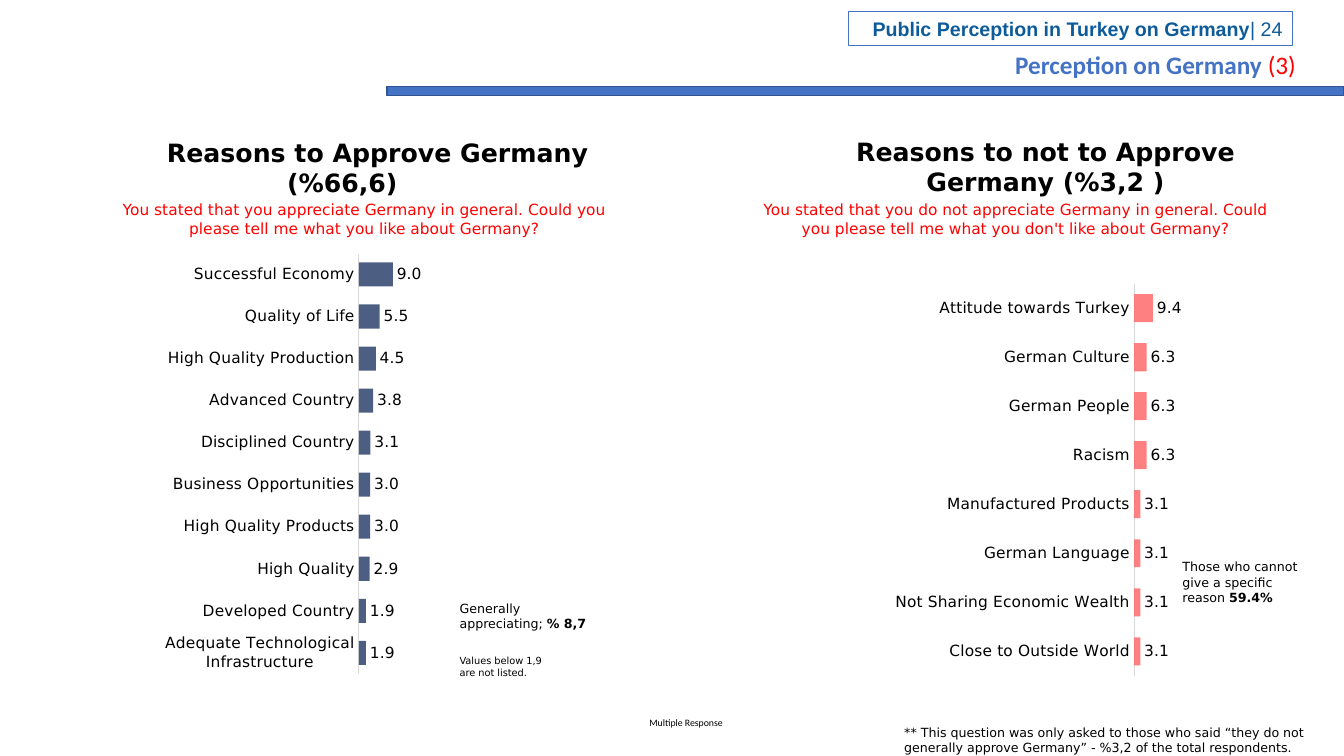
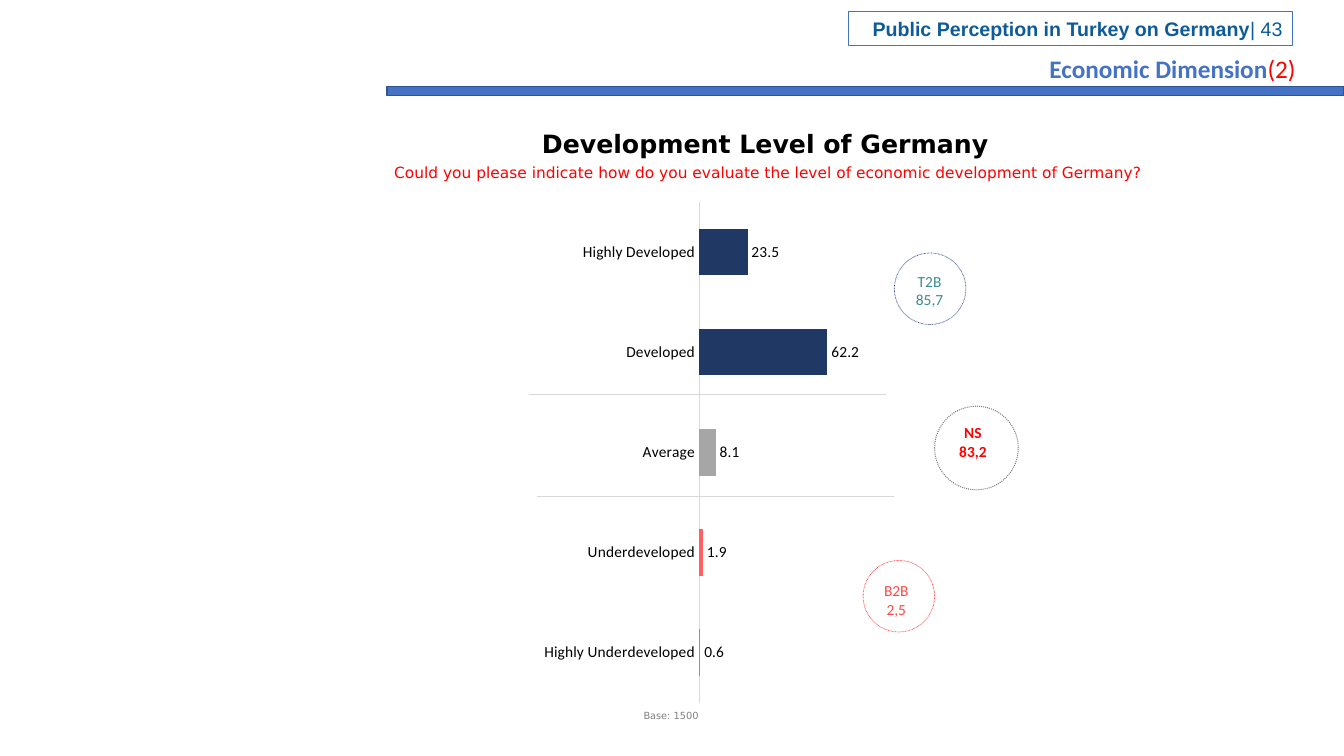
from dataclasses import dataclass

from lxml import etree
from pptx import Presentation
from pptx import util as u
from pptx.chart import data
from pptx.dml import color
from pptx.enum import chart as ec, dml, shapes, text
from pptx.oxml import ns

PX = 9144  # 100 px to the inch
LEFT, CENTER, RIGHT = text.PP_ALIGN.LEFT, text.PP_ALIGN.CENTER, text.PP_ALIGN.RIGHT


@dataclass(frozen=True)
class Theme:
    blue: str = "4472C4"
    edge: str = "325491"
    header: str = "0E5B9A"
    red: str = "FF0000"
    black: str = "000000"
    grey: str = "808080"
    rule: str = "D9D9D9"
    navy: str = "203864"
    coral: str = "FF6161"
    silver: str = "A6A6A6"
    teal: str = "3C8C93"
    rose: str = "FF4747"
    sans: str = "DejaVu Sans"
    body: str = "Calibri"
    head: str = "Arial"
    title: int = 18
    page: int = 14
    text: int = 11
    note: int = 9
    small: int = 7


T = Theme()


def rgb(c):
    return color.RGBColor.from_string(c)


def px(*lengths):
    return [u.Emu(n * PX) for n in lengths]


def set_font(f, size, name, c, bold=False):
    f.size, f.name, f.bold = u.Pt(size), name, bold
    f.color.rgb = rgb(c)


def set_line(line, c, width, dash=None):
    line.color.rgb = rgb(c)
    line.width = u.Pt(width)
    if dash:
        line.dash_style = dash


def set_plot_area(chart, x, y, w, h):
    """Fix the inner plot area, in fractions of the chart."""
    area = chart._chartSpace.chart.plotArea
    for old in area.findall(ns.qn("c:layout")):
        area.remove(old)
    layout = etree.Element(ns.qn("c:layout"))
    manual = etree.SubElement(layout, ns.qn("c:manualLayout"))
    for tag, val in (("layoutTarget", "inner"), ("xMode", "edge"), ("yMode", "edge"),
                     ("x", x), ("y", y), ("w", w), ("h", h)):
        etree.SubElement(manual, ns.qn("c:" + tag)).set("val", str(val))
    area.insert(0, layout)


class Deck:
    def __init__(self):
        self.prs = Presentation()
        self.prs.slide_width, self.prs.slide_height = px(1333, 750)
        self.s = None

    def slide(self, page, title, part, x, y):
        self.s = self.prs.slides.add_slide(self.prs.slide_layouts[6])
        self.shape(384, 86, 949, 9, fill=T.blue, line=T.edge, width=1)
        box = self.shape(842, 11, 440, 34, line=T.blue)
        self.fill_text(box.text_frame, [[("Public Perception in Turkey on Germany", {"bold": True}),
                                         (f"| {page}", {})]],
                       size=T.page, font=T.head, c=T.header, align=RIGHT)
        self.text(x, y, 1320 - x, 40, [(title, {"bold": True}), (part, {"c": T.red})],
                  size=T.title, font=T.body, c=T.blue)

    def shape(self, x, y, w, h, kind=shapes.MSO_SHAPE.RECTANGLE, fill=None,
              line=T.edge, width=0.75, dash=None):
        sp = self.s.shapes.add_shape(kind, *px(x, y, w, h))
        sp.shadow.inherit = False
        if fill:
            sp.fill.solid()
            sp.fill.fore_color.rgb = rgb(fill)
        else:
            sp.fill.background()
        set_line(sp.line, line, width, dash)
        return sp

    def fill_text(self, tf, paras, size=T.text, font=T.sans, c=T.black, bold=False,
                  align=LEFT, indent=0):
        """Each paragraph is a string or a list of (text, format changes)."""
        tf.word_wrap = True
        for i, runs in enumerate(paras):
            p = tf.add_paragraph() if i else tf.paragraphs[0]
            p.alignment = align
            if indent:
                p._p.get_or_add_pPr().set("indent", str(indent * PX))
            for words, changes in [(runs, {})] if isinstance(runs, str) else runs:
                r = p.add_run()
                r.text = words
                set_font(r.font, **{"size": size, "name": font, "c": c, "bold": bold, **changes})

    def text(self, x, y, w, h, *paras, **fmt):
        self.fill_text(self.s.shapes.add_textbox(*px(x, y, w, h)).text_frame, paras, **fmt)

    def heading(self, x, y, w, h, words, indent=0):
        self.text(x, y, w, h, words, size=T.title, bold=True, align=CENTER, indent=indent)

    def question(self, x, y, w, h, words):
        self.text(x, y, w, h, words, c=T.red, align=CENTER)

    def bars(self, x, y, w, h, rows, plot, top, c, font=T.sans, gap=75, alpha=None,
             points=(), reverse=True):
        cd = data.CategoryChartData(number_format="###0.0")
        cd.categories = [name for name, _ in rows]
        cd.add_series("Series 1", [value for _, value in rows])
        ch = self.s.shapes.add_chart(ec.XL_CHART_TYPE.BAR_CLUSTERED, *px(x, y, w, h), cd).chart
        ch.has_title = ch.has_legend = False
        set_font(ch.font, T.text, font, T.black)
        set_plot_area(ch, *plot)

        cat, val = ch.category_axis, ch.value_axis
        cat.reverse_order = reverse
        cat.major_tick_mark = cat.minor_tick_mark = ec.XL_TICK_MARK.NONE
        cat.has_major_gridlines = val.has_major_gridlines = False
        set_line(cat.format.line, T.rule, 0.75)
        set_font(cat.tick_labels.font, T.text, font, T.black)
        val.minimum_scale, val.maximum_scale = 0, top
        val.visible = False

        bar = ch.plots[0]
        bar.gap_width, bar.vary_by_categories = gap, False
        ser = bar.series[0]
        ser.invert_if_negative = False
        for item, item_color in [(ser, c)] + [(ser.points[i], pc) for i, pc in enumerate(points)]:
            item.format.fill.solid()
            item.format.fill.fore_color.rgb = rgb(item_color)
        if alpha:
            clr = ser._element.find(".//" + ns.qn("a:srgbClr"))
            etree.SubElement(clr, ns.qn("a:alpha")).set("val", str(alpha * 1000))

        dl = ser.data_labels
        dl.show_value = True
        dl.position = ec.XL_LABEL_POSITION.OUTSIDE_END
        dl.number_format, dl.number_format_is_linked = "###0.0", False
        set_font(dl.font, T.text, font, T.black)

    def rule(self, x, y, w):
        cn = self.s.shapes.add_connector(shapes.MSO_CONNECTOR.STRAIGHT, *px(x, y, x + w, y))
        set_line(cn.line, T.rule, 0.75)
        etree.SubElement(cn._element.spPr, ns.qn("a:effectLst"))

    def badge(self, x, y, d, label, value, c, line, width, mid, top, bold=False):
        """Dotted circle with two text lines centred on mid, starting at top."""
        self.shape(x, y, d, d, shapes.MSO_SHAPE.OVAL, line=line, width=width,
                   dash=dml.MSO_LINE.ROUND_DOT)
        self.text(mid - 46, top, 92, 47, label, value, font=T.body, c=c, bold=bold, align=CENTER)


def perception(d):
    d.slide(24, "Perception on Germany ", "(3)", 997, 44)
    d.heading(52, 131, 575, 71, "Reasons to Approve Germany (%66,6)", indent=70)
    d.bars(84, 251, 547, 431, [
        ("Successful Economy", 9), ("Quality of Life", 5.5), ("High Quality Production", 4.5),
        ("Advanced Country", 3.8), ("Disciplined Country", 3.1), ("Business Opportunities", 3),
        ("High Quality Products", 3), ("High Quality", 2.9), ("Developed Country", 1.9),
        ("Adequate Technological Infrastructure", 1.9),
    ], plot=(0.497, 0, 0.343, 0.969), top=50, c=T.navy, alpha=80)
    d.question(88, 194, 547, 47, "You stated that you appreciate Germany in general. "
               "Could you please tell me what you like about Germany?")
    d.text(446, 591, 165, 40, [("Generally appreciating; ", {}), ("% 8,7", {"bold": True})],
           size=T.note)
    d.text(446, 645, 114, 34, "Values below 1,9 are not listed.", size=T.small)

    d.heading(777, 130, 520, 71, "Reasons to not to Approve Germany (%3,2 )")
    d.question(734, 194, 547, 47, "You stated that you do not appreciate Germany in general. "
               "Could you please tell me what you don't like about Germany?")
    d.bars(844, 281, 579, 402, [
        ("Attitude towards Turkey", 9.4), ("German Culture", 6.3), ("German People", 6.3),
        ("Racism", 6.3), ("Manufactured Products", 3.1), ("German Language", 3.1),
        ("Not Sharing Economic Wealth", 3.1), ("Close to Outside World", 3.1),
    ], plot=(0.485, 0, 0.343, 0.969), top=100, c=T.coral, alpha=80)
    d.text(1163, 550, 150, 56, [("Those who cannot give a specific reason ", {}),
                                ("59.4%", {"bold": True})], size=T.note)
    d.text(627, 706, 107, 22, "Multiple Response", size=T.small, font=T.body, align=CENTER)
    d.text(887, 714, 437, 40, "** This question was only asked to those who said “they do not "
           "generally approve Germany” - %3,2 of the total respondents.", size=T.note)


def economy(d):
    d.slide(43, "Economic Dimension", "(2)", 1031, 48)
    d.heading(336, 122, 846, 40, "Development Level of Germany")
    d.question(344, 157, 836, 29, "Could you please indicate how do you evaluate the level "
               "of economic development of Germany?")
    d.bars(462, 192, 477, 522, [
        ("Highly Underdeveloped", 0.6), ("Underdeveloped", 1.9), ("Average", 8.1),
        ("Developed", 62.2), ("Highly Developed", 23.5),
    ], plot=(0.485, 0.016, 0.515, 0.952), top=120, c=T.navy, font=T.body, gap=115,
        points=[T.coral, T.coral, T.silver, T.navy, T.navy], reverse=False)
    d.rule(525, 391, 354)
    d.rule(533, 493, 354)
    d.badge(887, 251, 71, "T2B", "85,7", T.teal, T.edge, 0.5, mid=922, top=265)
    d.badge(927, 403, 83, "NS", "83,2", T.red, T.grey, 0.75, mid=965, top=415, bold=True)
    d.badge(856, 556, 71, "B2B", "2,5", T.rose, T.rose, 0.5, mid=889, top=572)
    d.text(625, 699, 81, 22, "Base: 1500", size=T.small, c=T.grey, align=CENTER)


def main():
    d = Deck()
    perception(d)
    economy(d)
    d.prs.save("out.pptx")


if __name__ == "__main__":
    main()
